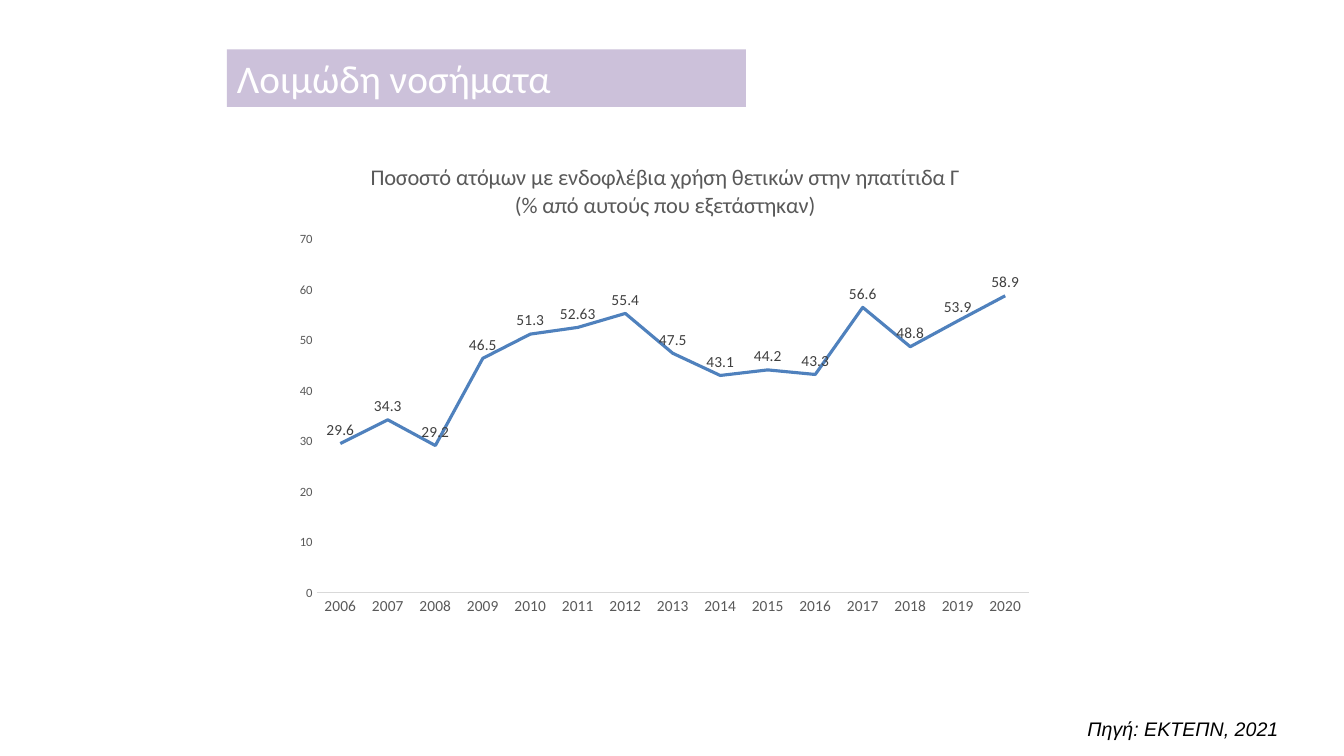
from lxml import etree
from pptx import Presentation
from pptx.chart.data import CategoryChartData
from pptx.dml.color import RGBColor
from pptx.enum.chart import XL_CHART_TYPE, XL_LABEL_POSITION, XL_TICK_MARK
from pptx.enum.text import MSO_ANCHOR, PP_ALIGN
from pptx.oxml.ns import qn
from pptx.util import Pt

LINE = XL_CHART_TYPE.LINE
ABOVE = XL_LABEL_POSITION.ABOVE
NO_TICK = XL_TICK_MARK.NONE
MIDDLE = MSO_ANCHOR.MIDDLE
LEFT = PP_ALIGN.LEFT

# Content
TITLE = "Λοιμώδη νοσήματα"
HEAD = "Ποσοστό ατόμων με ενδοφλέβια χρήση θετικών στην ηπατίτιδα Γ (% από αυτούς που εξετάστηκαν)"
SOURCE = "Πηγή: ΕΚΤΕΠΝ, 2021"
START = 2006
RATES = [29.6, 34.3, 29.2, 46.5, 51.3, 52.63, 55.4, 47.5,
         43.1, 44.2, 43.3, 56.6, 48.8, 53.9, 58.9]

# Places in points: left, top, width, height
TITLE_BOX = (162, 35.3, 370.8, 41)
CHART_BOX = (204.5, 102.2, 541.4, 345.6)
SOURCE_BOX = (769.7, 508.3, 190, 24.5)
# Plot area as shares of the chart
PLOT = {"x": 0.04, "y": 0.2, "w": 0.94, "h": 0.73}


def color(text):
    return RGBColor.from_string(text)


def style(font, size, tint, face="Calibri", italic=False):
    font.size = Pt(size)
    font.name = face
    font.bold = False
    font.italic = italic
    font.color.rgb = color(tint)


def write(frame, text, align=None, **look):
    frame.word_wrap = True
    frame.text = text
    para = frame.paragraphs[0]
    if align is not None:
        para.alignment = align
    style(para.runs[0].font, **look)


prs = Presentation()
prs.slide_width, prs.slide_height = Pt(960), Pt(540)
slide = prs.slides.add_slide(prs.slide_layouts[5])

# Title band
band = slide.shapes.title
band.left, band.top, band.width, band.height = map(Pt, TITLE_BOX)
band.fill.solid()
band.fill.fore_color.rgb = color("CCC1DA")
band.text_frame.vertical_anchor = MIDDLE
write(band.text_frame, TITLE, align=LEFT, size=28, tint="FFFFFF")

# Chart
data = CategoryChartData()
data.categories = [str(START + i) for i in range(len(RATES))]
data.add_series("Series 1", RATES)
chart = slide.shapes.add_chart(LINE, *map(Pt, CHART_BOX), data).chart
style(chart.font, 10, "000000")
chart.has_legend = False
chart.has_title = True
write(chart.chart_title.text_frame, HEAD, size=16, tint="595959")
chart.chart_title.include_in_layout = False

# Fixed plot area
area = chart.plots[0]._element.getparent()
for old in area.findall(qn("c:layout")):
    area.remove(old)
layout = etree.Element(qn("c:layout"))
area.insert(0, layout)
manual = etree.SubElement(layout, qn("c:manualLayout"))
marks = {"layoutTarget": "inner", "xMode": "edge", "yMode": "edge", **PLOT}
for tag, val in marks.items():
    etree.SubElement(manual, qn("c:" + tag), val=str(val))

# Axes
years, scale = chart.category_axis, chart.value_axis
for axis, size in ((years, 11), (scale, 9)):
    axis.major_tick_mark = axis.minor_tick_mark = NO_TICK
    axis.has_major_gridlines = False
    style(axis.tick_labels.font, size, "595959")
years.format.line.color.rgb = color("D9D9D9")
years.format.line.width = Pt(0.75)
scale.format.line.fill.background()
scale.minimum_scale, scale.maximum_scale, scale.major_unit = 0, 70, 10

# Line and its labels
plot = chart.plots[0]
plot.vary_by_categories = False
rate = plot.series[0]
rate.smooth = False
rate.format.line.color.rgb = color("4F81BD")
rate.format.line.width = Pt(2.25)
labels = rate.data_labels
labels.show_value = True
labels.position = ABOVE
style(labels.font, 11, "404040")

# Source
note = slide.shapes.add_textbox(*map(Pt, SOURCE_BOX))
write(note.text_frame, SOURCE, size=14, tint="000000", face="Arial", italic=True)

prs.save("out.pptx")
